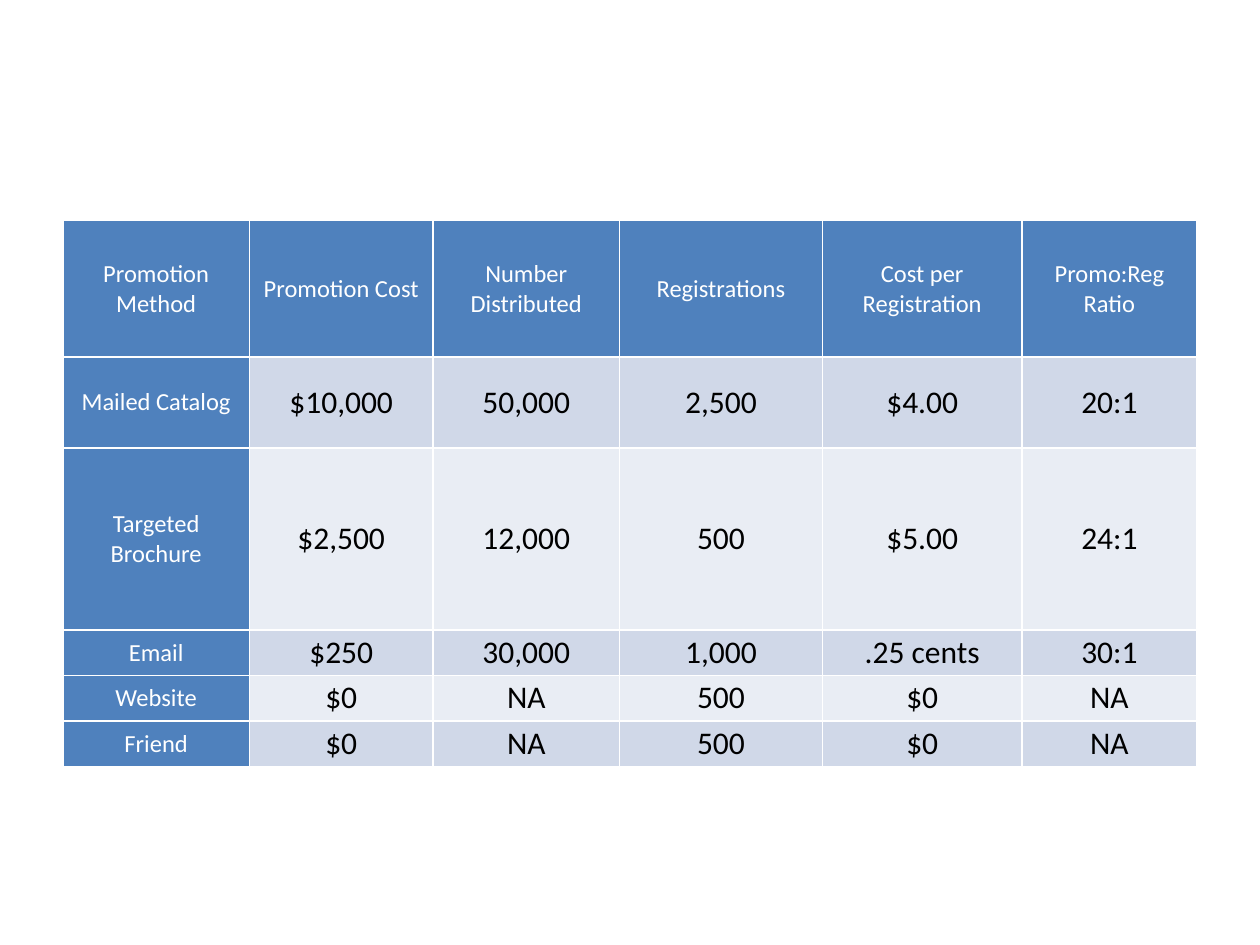
from lxml import etree
from pptx import Presentation
from pptx.dml.color import RGBColor
from pptx.enum import text
from pptx.oxml import ns
from pptx.util import Pt

COLORS = {"heading": "4F81BD", "odd_row": "D0D8E8", "even_row": "E9EDF4",
          "heading_text": "FFFFFF", "figure_text": "000000", "border": "FFFFFF"}
FONT = "Calibri"
COLUMN_WIDTHS = [106.5, 105, 106.5, 116, 114, 100]
ROW_HEIGHTS = [78, 52, 104, 26, 26, 26]
PROMOTIONS = [
    ["Promotion Method", "Promotion Cost", "Number Distributed",
     "Registrations", "Cost per Registration", "Promo:Reg Ratio"],
    ["Mailed Catalog", "$10,000", "50,000", "2,500", "$4.00", "20:1"],
    ["Targeted Brochure", "$2,500", "12,000", "500", "$5.00", "24:1"],
    ["Email", "$250", "30,000", "1,000", ".25 cents", "30:1"],
    ["Website", "$0", "NA", "500", "$0", "NA"],
    ["Friend", "$0", "NA", "500", "$0", "NA"],
]


def add_borders(cell, color, width=1):
    properties = cell._tc.get_or_add_tcPr()
    for side in ("lnL", "lnR", "lnT", "lnB"):
        line = etree.SubElement(properties, ns.qn(f"a:{side}"), w=str(Pt(width)))
        fill = etree.SubElement(line, ns.qn("a:solidFill"))
        etree.SubElement(fill, ns.qn("a:srgbClr"), val=color)


def fill_cell(cell, wording, fill, color, size):
    add_borders(cell, COLORS["border"])
    cell.fill.solid()
    cell.fill.fore_color.rgb = RGBColor.from_string(COLORS[fill])
    cell.vertical_anchor = text.MSO_ANCHOR.MIDDLE
    cell.margin_left = cell.margin_right = Pt(5)
    cell.margin_top = cell.margin_bottom = Pt(0)
    paragraph = cell.text_frame.paragraphs[0]
    paragraph.alignment = text.PP_ALIGN.CENTER
    run = paragraph.add_run()
    run.text = wording
    run.font.name = FONT
    run.font.size = Pt(size)
    run.font.bold = False
    run.font.color.rgb = RGBColor.from_string(COLORS[color])


def add_promotion_table(slide, left, top, width, height):
    table = slide.shapes.add_table(
        len(PROMOTIONS), len(COLUMN_WIDTHS),
        Pt(left), Pt(top), Pt(width), Pt(height)).table
    for column, share in zip(table.columns, COLUMN_WIDTHS):
        column.width = Pt(width * share / sum(COLUMN_WIDTHS))
    for row, share in zip(table.rows, ROW_HEIGHTS):
        row.height = Pt(height * share / sum(ROW_HEIGHTS))
    for r, promotion in enumerate(PROMOTIONS):
        for c, wording in enumerate(promotion):
            if r == 0 or c == 0:
                style = ("heading", "heading_text", 14)
            else:
                style = ("odd_row" if r % 2 else "even_row", "figure_text", 18)
            fill_cell(table.cell(r, c), wording, *style)


def main():
    presentation = Presentation()
    presentation.slide_width, presentation.slide_height = Pt(720), Pt(540)
    slide = presentation.slides.add_slide(presentation.slide_layouts[6])
    add_promotion_table(slide, 36, 126, 648, 312)
    presentation.save("out.pptx")


if __name__ == "__main__":
    main()
